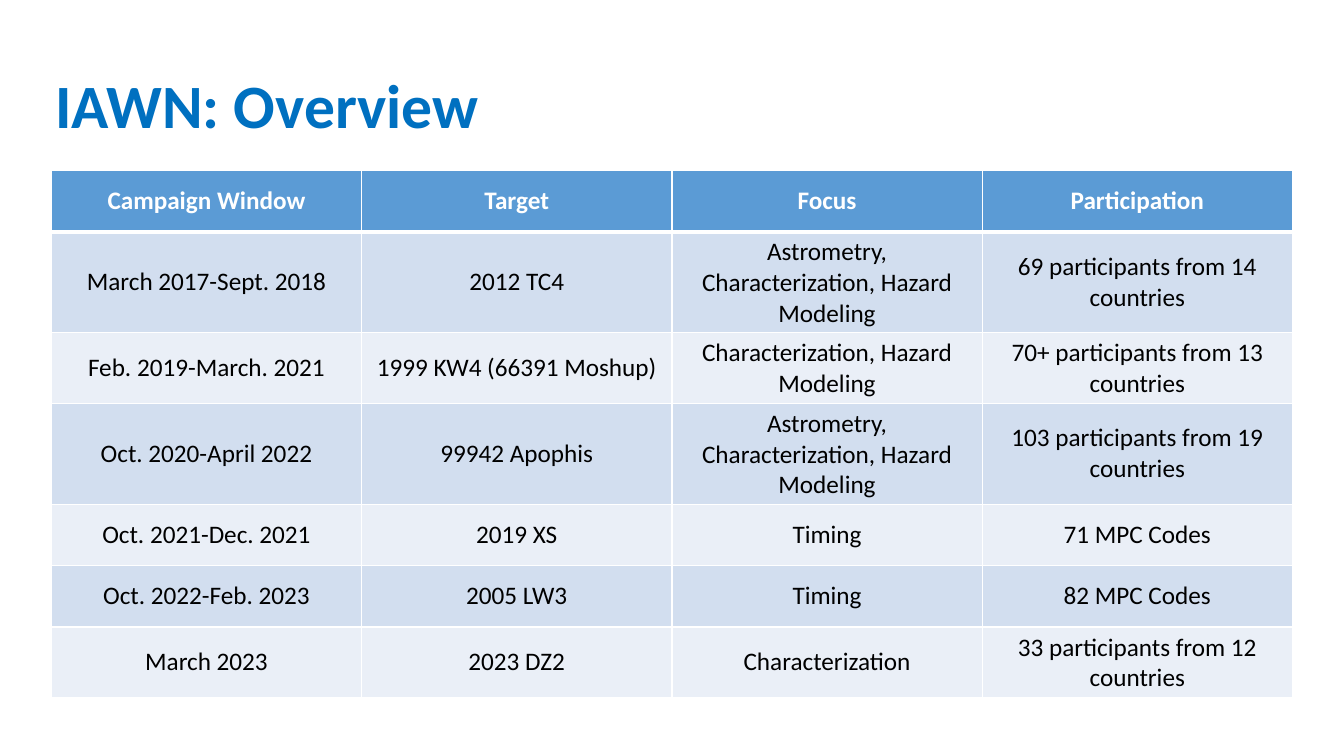
import dataclasses

import lxml.etree
import pptx
import pptx.dml.color
import pptx.enum.text
import pptx.oxml.ns
import pptx.util

Inches, Pt = pptx.util.Inches, pptx.util.Pt
PP_ALIGN, ANCHOR = pptx.enum.text.PP_ALIGN, pptx.enum.text.MSO_ANCHOR
qn = pptx.oxml.ns.qn


@dataclasses.dataclass(frozen=True)
class Theme:
    font: str = "Calibri"
    title: str = "0070C0"
    header: str = "5B9BD5"
    bands: tuple = ("D2DEEF", "EAEFF7")
    white: str = "FFFFFF"
    black: str = "000000"
    title_size: int = 44
    table_size: int = 18
    rule: int = 1
    header_rule: int = 3


THEME = Theme()
WIDTH, HEIGHT = 13.33, 7.5
TITLE_BOX = (0.45, 0.35, 11.5, 1.45)
TABLE_BOX = (0.51, 1.69, 12.31, 4.27)

HEADER = ("Campaign Window", "Target", "Focus", "Participation")
CAMPAIGNS = (
    ("March 2017-Sept. 2018", "2012 TC4",
     "Astrometry, Characterization, Hazard Modeling", "69 participants from 14 countries"),
    ("Feb. 2019-March. 2021", "1999 KW4 (66391 Moshup)",
     "Characterization, Hazard Modeling", "70+ participants from 13 countries"),
    ("Oct. 2020-April 2022", "99942 Apophis",
     "Astrometry, Characterization, Hazard Modeling", "103 participants from 19 countries"),
    ("Oct. 2021-Dec. 2021", "2019 XS", "Timing", "71 MPC Codes"),
    ("Oct. 2022-Feb. 2023", "2005 LW3", "Timing", "82 MPC Codes"),
    ("March 2023", "2023 DZ2", "Characterization", "33 participants from 12 countries"),
)


def rgb(value):
    return pptx.dml.color.RGBColor.from_string(value)


def add_run(p, text, size, color, bold=False):
    r = p.add_run()
    r.text = text
    r.font.name, r.font.size, r.font.bold = THEME.font, Pt(size), bold
    r.font.color.rgb = rgb(color)


def set_borders(cell, widths):
    """Draw white cell borders; widths gives points by side letter."""
    tc_pr = cell._tc.get_or_add_tcPr()
    for i, (side, width) in enumerate(widths.items()):
        ln = lxml.etree.Element(qn(f"a:ln{side}"), w=str(Pt(width)))
        fill = lxml.etree.SubElement(ln, qn("a:solidFill"))
        lxml.etree.SubElement(fill, qn("a:srgbClr"), val=THEME.white)
        tc_pr.insert(i, ln)  # borders come before the fill


def add_title(s, box, text):
    tf = s.shapes.add_textbox(*map(Inches, box)).text_frame
    tf.word_wrap = True
    tf.vertical_anchor = ANCHOR.MIDDLE
    p = tf.paragraphs[0]
    p.line_spacing = 0.9
    add_run(p, text, THEME.title_size, THEME.title, bold=True)


def fill_cell(cell, text, row, last_row):
    is_header = row == 0
    cell.fill.solid()
    cell.fill.fore_color.rgb = rgb(THEME.header if is_header else THEME.bands[(row - 1) % 2])
    cell.vertical_anchor = ANCHOR.MIDDLE
    p = cell.text_frame.paragraphs[0]
    p.alignment = PP_ALIGN.CENTER
    add_run(p, text, THEME.table_size, THEME.white if is_header else THEME.black, is_header)
    set_borders(cell, {
        "L": THEME.rule,
        "R": THEME.rule,
        "T": THEME.header_rule if row == 1 else THEME.rule,
        "B": THEME.header_rule if is_header else THEME.rule,
    })


def add_campaign_table(s, box, rows):
    left, top, width, height = map(Inches, box)
    table = s.shapes.add_table(len(rows), len(rows[0]), left, top, width, height).table
    # Equal columns and rows; tall text stretches its row
    for column in table.columns:
        column.width = width // len(rows[0])
    for i, texts in enumerate(rows):
        table.rows[i].height = height // len(rows)
        for j, text in enumerate(texts):
            fill_cell(table.cell(i, j), text, i, len(rows) - 1)


def main():
    prs = pptx.Presentation()
    prs.slide_width, prs.slide_height = Inches(WIDTH), Inches(HEIGHT)
    s = prs.slides.add_slide(prs.slide_layouts[6])
    add_title(s, TITLE_BOX, "IAWN: Overview")
    add_campaign_table(s, TABLE_BOX, (HEADER, *CAMPAIGNS))
    prs.save("out.pptx")


if __name__ == "__main__":
    main()
